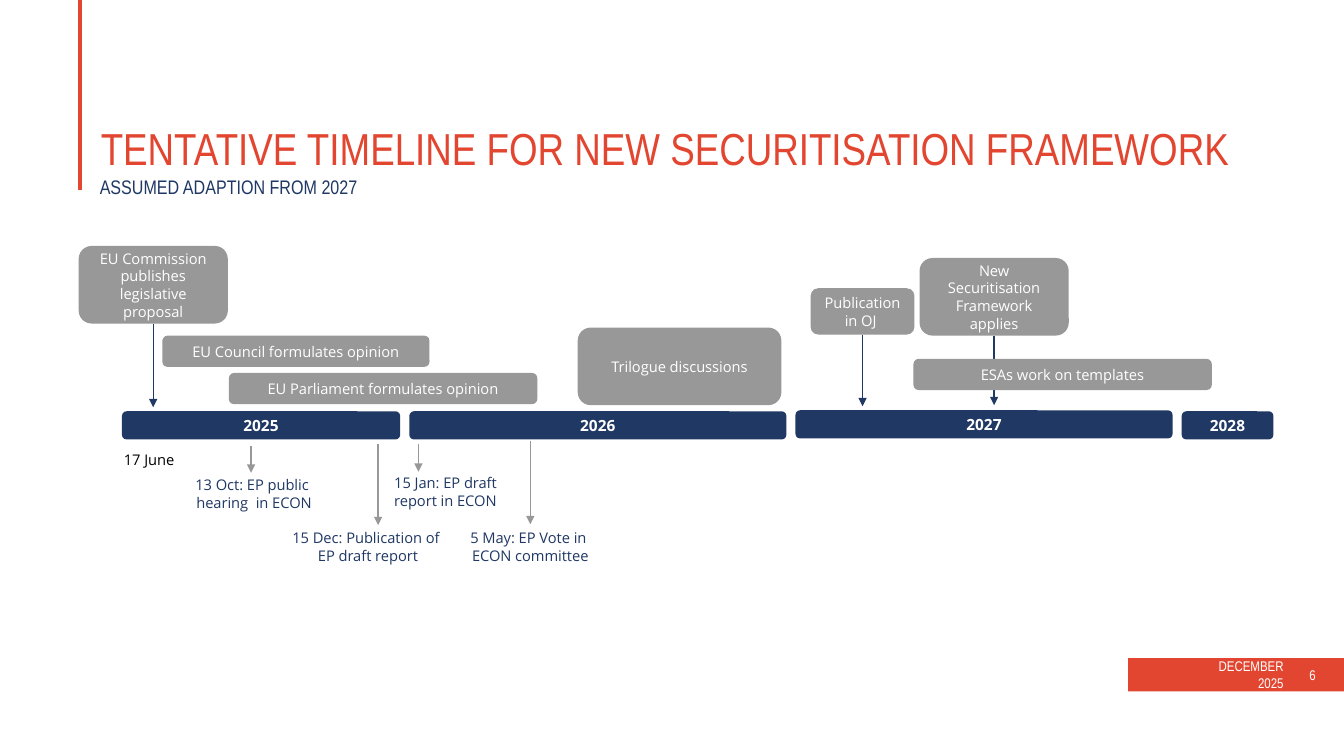
from lxml.etree import SubElement
from pptx import Presentation
from pptx.dml.color import RGBColor
from pptx.enum.shapes import MSO_CONNECTOR, MSO_SHAPE
from pptx.enum.text import MSO_ANCHOR, MSO_AUTO_SIZE, PP_ALIGN
from pptx.oxml.ns import qn
from pptx.util import Inches, Pt

RED = RGBColor(0xE3, 0x46, 0x30)
NAVY = RGBColor(0x20, 0x38, 0x64)
GREY = RGBColor(0x98, 0x98, 0x98)
WHITE = RGBColor(0xFF, 0xFF, 0xFF)
BLACK = RGBColor(0x00, 0x00, 0x00)
HEADING_FONT = "Arial Narrow"
BODY_FONT = "Open Sans"

presentation = Presentation()
presentation.slide_width = Inches(13.33)
presentation.slide_height = Inches(7.5)
slide = presentation.slides.add_slide(presentation.slide_layouts[6])


def add_text(text, left, top, width, height, fill=None, shape_type=MSO_SHAPE.ROUNDED_RECTANGLE,
             font=BODY_FONT, size=10.5, color=WHITE, bold=False, align=PP_ALIGN.CENTER,
             anchor=MSO_ANCHOR.MIDDLE, insets=(0.1, 0.05, 0.1, 0.05), wrap=True):
    place = [Inches(value) for value in (left, top, width, height)]
    if fill is None:
        shape = slide.shapes.add_textbox(*place)
    else:
        shape = slide.shapes.add_shape(shape_type, *place)
        shape.shadow.inherit = False
        shape.fill.solid()
        shape.fill.fore_color.rgb = fill
        shape.line.fill.background()
    frame = shape.text_frame
    frame.word_wrap = wrap
    frame.auto_size = MSO_AUTO_SIZE.NONE if wrap else MSO_AUTO_SIZE.SHAPE_TO_FIT_TEXT
    frame.vertical_anchor = anchor
    frame.margin_left, frame.margin_top, frame.margin_right, frame.margin_bottom = map(Inches, insets)
    frame.text = text
    for paragraph in frame.paragraphs:
        paragraph.alignment = align
        paragraph.font.name = font
        paragraph.font.size = Pt(size)
        paragraph.font.bold = bold
        paragraph.font.color.rgb = color
    return shape


def add_line(x, top, bottom, color, width=1, arrow=True):
    line = slide.shapes.add_connector(MSO_CONNECTOR.STRAIGHT, x, Inches(top), x, Inches(bottom))
    line.line.color.rgb = color
    line.line.width = Pt(width)
    if arrow:
        SubElement(line.line._get_or_add_ln(), qn("a:tailEnd"), type="triangle")
    SubElement(line._element.spPr, qn("a:effectLst"))
    return line


add_text("", 11.19, 6.53, 2.14, 0.33, fill=RED, shape_type=MSO_SHAPE.RECTANGLE)
add_line(Inches(0.79), 0, 1.89, RED, width=3, arrow=False)
add_text("TENTATIVE TIMELINE FOR NEW SECURITISATION FRAMEWORK", 0.92, 0.79, 11.5, 0.94,
         font=HEADING_FONT, size=32, color=RED, align=PP_ALIGN.LEFT,
         anchor=MSO_ANCHOR.BOTTOM, insets=(0.08, 0.04, 0.08, 0))
add_text("ASSUMED ADAPTION FROM 2027", 0.91, 1.69, 11.5, 0.31,
         font=HEADING_FONT, size=14, color=NAVY, align=PP_ALIGN.LEFT,
         anchor=MSO_ANCHOR.TOP, insets=(0.08, 0.04, 0.08, 0.04))
add_text("DECEMBER 2025", 11.98, 6.61, 0.75, 0.17, font=HEADING_FONT, size=10,
         align=PP_ALIGN.RIGHT, insets=(0, 0, 0, 0), wrap=False)
add_text("6", 12.74, 6.61, 0.35, 0.18, font=HEADING_FONT, size=10,
         align=PP_ALIGN.RIGHT, insets=(0.04, 0.04, 0.04, 0.04))

years = [
    ("2025", 1.21, 4.08, 2.76),
    ("2026", 4.06, 4.08, 3.74),
    ("2027", 7.89, 4.07, 3.74),
    ("2028", 11.72, 4.08, 0.91),
]
for year, left, top, width in years:
    add_text(year, left, top, width, 0.28, fill=NAVY, size=11, bold=True)

milestones = [
    ("EU Commission publishes legislative proposal", 0.78, 2.44, 1.48, 0.77, 4.04),
    ("Publication in OJ ", 8.04, 2.86, 1.03, 0.46, 4.03),
    ("New Securitisation Framework applies", 9.12, 2.56, 1.48, 0.77, 4.02),
]
for text, left, top, width, height, arrow_end in milestones:
    milestone = add_text(text, left, top, width, height, fill=GREY)
    arrow = add_line(milestone.left + milestone.width // 2, top + height, arrow_end, NAVY)
    arrow.begin_connect(milestone, 2)

phases = [
    ("EU Council formulates opinion", 1.61, 3.33, 2.65, 0.31),
    ("EU Parliament formulates opinion", 2.27, 3.7, 3.06, 0.31),
    ("Trilogue discussions", 5.73, 3.25, 2.02, 0.77),
    ("ESAs work on templates", 9.06, 3.56, 2.96, 0.31),
]
for text, left, top, width, height in phases:
    add_text(text, left, top, width, height, fill=GREY)

add_text("17 June", 1.13, 4.42, 0.75, 0.28, color=BLACK, align=PP_ALIGN.LEFT,
         anchor=MSO_ANCHOR.TOP, wrap=False)

parliament_steps = [
    ("13 Oct: EP public \nhearing  in ECON", 1.85, 4.68, 1.34, PP_ALIGN.CENTER, 2.49, 4.42, 4.69),
    ("15 Dec: Publication of \nEP draft report", 2.81, 5.21, 1.68, PP_ALIGN.CENTER, 3.75, 4.4, 5.21),
    ("15 Jan: EP draft\nreport in ECON", 3.83, 4.66, 1.24, PP_ALIGN.LEFT, 4.15, 4.4, 4.68),
    ("5 May: EP Vote in \nECON committee", 4.57, 5.21, 1.38, PP_ALIGN.CENTER, 5.26, 4.38, 5.2),
]
for text, left, top, width, align, arrow_x, arrow_top, arrow_end in parliament_steps:
    add_text(text, left, top, width, 0.43, color=NAVY, align=align, anchor=MSO_ANCHOR.TOP,
             insets=(0.08, 0.04, 0.08, 0.04), wrap=False)
    add_line(Inches(arrow_x), arrow_top, arrow_end, GREY)

presentation.save("out.pptx")
